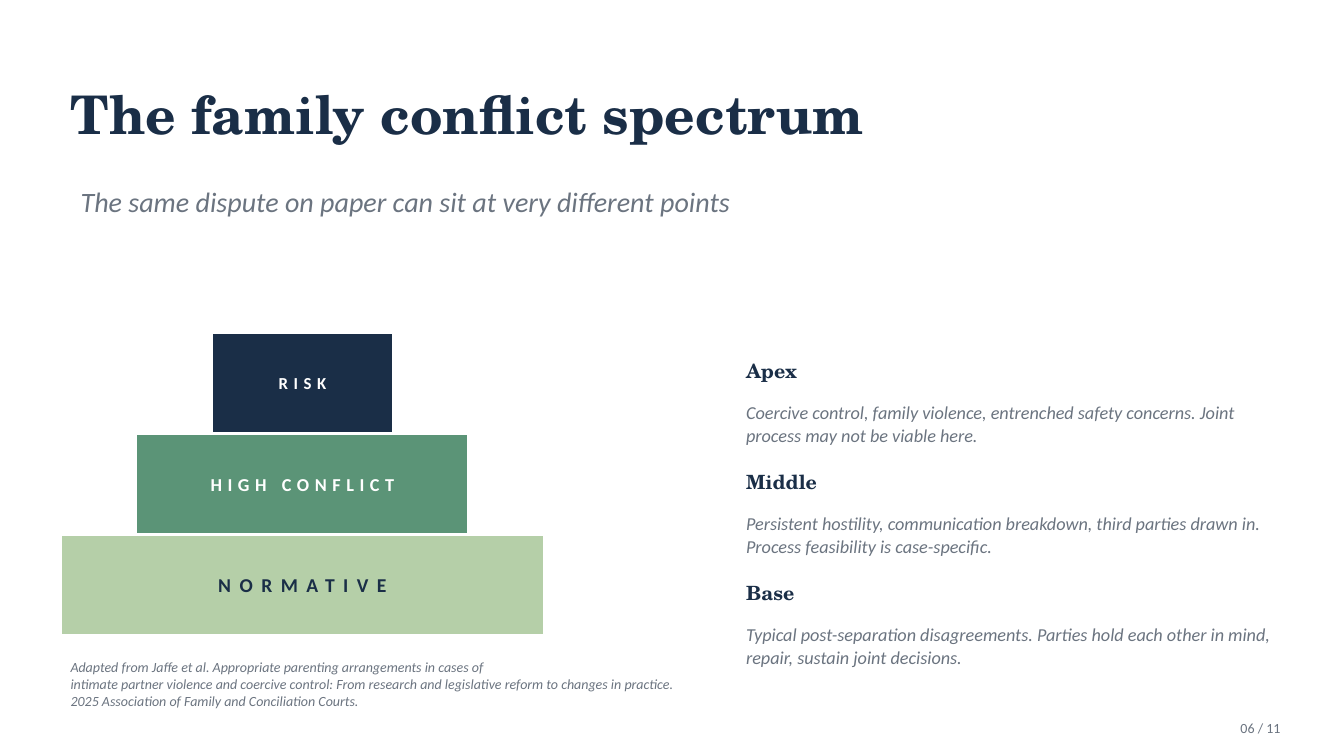
from pptx import Presentation
from pptx.dml.color import RGBColor
from pptx.enum.shapes import MSO_SHAPE
from pptx.enum.text import MSO_ANCHOR, MSO_AUTO_SIZE, PP_ALIGN
from pptx.oxml.ns import qn
from pptx.util import Inches, Pt

NAVY = RGBColor(0x1A, 0x2E, 0x47)
GREEN = RGBColor(0x5B, 0x94, 0x77)
SAGE = RGBColor(0xB5, 0xCF, 0xA8)
GREY = RGBColor(0x6B, 0x74, 0x80)
WHITE = RGBColor(0xFF, 0xFF, 0xFF)
SERIF, SANS = "TeX Gyre Schola", "Calibri"


def write(p, text, font=SANS, size=13, color=GREY, bold=False, italic=False,
          align=PP_ALIGN.LEFT, tracking=0, before=0, line=None):
    p.alignment = align
    p.space_before, p.space_after = Pt(before), Pt(0)
    if line:
        p.line_spacing = Pt(line)
    r = p.add_run()
    r.text = text
    f = r.font
    f.name, f.size, f.bold, f.italic = font, Pt(size), bold, italic
    f.color.rgb = color
    if tracking:
        f._element.set("spc", str(tracking * 100))


def frame(sp, x, y, w, h, anchor=MSO_ANCHOR.MIDDLE):
    sp.left, sp.top, sp.width, sp.height = map(Inches, (x, y, w, h))
    tf = sp.text_frame
    tf.word_wrap = True
    tf.auto_size = MSO_AUTO_SIZE.NONE
    tf.vertical_anchor = anchor
    tf.margin_left = tf.margin_right = tf.margin_top = tf.margin_bottom = 0
    return tf


prs = Presentation()
prs.slide_width, prs.slide_height = Inches(13.33), Inches(7.5)
s = prs.slides.add_slide(prs.slide_layouts[1])

tf = frame(s.shapes.title, 0.7, 0.65, 12, 0.95)
write(tf.paragraphs[0], "The family conflict spectrum", font=SERIF, size=38,
      color=NAVY, bold=True)

tf = frame(s.shapes.add_textbox(0, 0, 0, 0), 0.8, 1.8, 12, 0.4)
write(tf.paragraphs[0], "The same dispute on paper can sit at very different points",
      size=20, italic=True)

tiers = [
    ("NORMATIVE", 4.8, SAGE, NAVY, 14, 6),
    ("HIGH CONFLICT", 3.3, GREEN, WHITE, 13, 4),
    ("RISK", 1.8, NAVY, WHITE, 12, 4),
]
for i, (label, width, fill, color, size, tracking) in enumerate(tiers):
    sp = s.shapes.add_shape(MSO_SHAPE.RECTANGLE, 0, 0, 0, 0)
    sp.shadow.inherit = False
    sp.fill.solid()
    sp.fill.fore_color.rgb = fill
    sp.line.color.rgb = WHITE
    sp.line.width = Pt(2)
    tf = frame(sp, 3 - width / 2, 5.3 - i, width, 1)
    write(tf.paragraphs[0], label, size=size, color=color, bold=True,
          align=PP_ALIGN.CENTER, tracking=tracking)

levels = [
    ("Apex", "Coercive control, family violence, entrenched safety concerns. "
             "Joint process may not be viable here."),
    ("Middle", "Persistent hostility, communication breakdown, third parties drawn in. "
               "Process feasibility is case-specific."),
    ("Base", "Typical post-separation disagreements. Parties hold each other in mind, "
             "repair, sustain joint decisions."),
]
tf = frame(s.placeholders[1], 7.4, 3.56, 5.4, 3.2, MSO_ANCHOR.TOP)
for i, (heading, description) in enumerate(levels):
    p = tf.add_paragraph() if i else tf.paragraphs[0]
    write(p, heading, font=SERIF, size=14, color=NAVY, bold=True,
          before=16.9 if i else 0, line=17)
    write(tf.add_paragraph(), description, italic=True, before=13.3, line=16)
for p in tf.paragraphs:
    pPr = p._p.get_or_add_pPr()
    pPr.set("marL", "0")
    pPr.set("indent", "0")
    pPr.append(pPr.makeelement(qn("a:buNone"), {}))

source = [
    "Adapted from Jaffe et al. Appropriate parenting arrangements in cases of",
    "intimate partner violence and coercive control: From research and legislative "
    "reform to changes in practice.",
    "2025 Association of Family and Conciliation Courts.",
]
tf = frame(s.shapes.add_textbox(0, 0, 0, 0), 0.7, 6.53, 12, 0.51)
for i, text in enumerate(source):
    p = tf.add_paragraph() if i else tf.paragraphs[0]
    write(p, text, size=10, italic=True)

tf = frame(s.shapes.add_textbox(0, 0, 0, 0), 11.9, 7.1, 0.8, 0.25)
write(tf.paragraphs[0], "06 / 11", size=10, align=PP_ALIGN.RIGHT)

prs.save("out.pptx")
